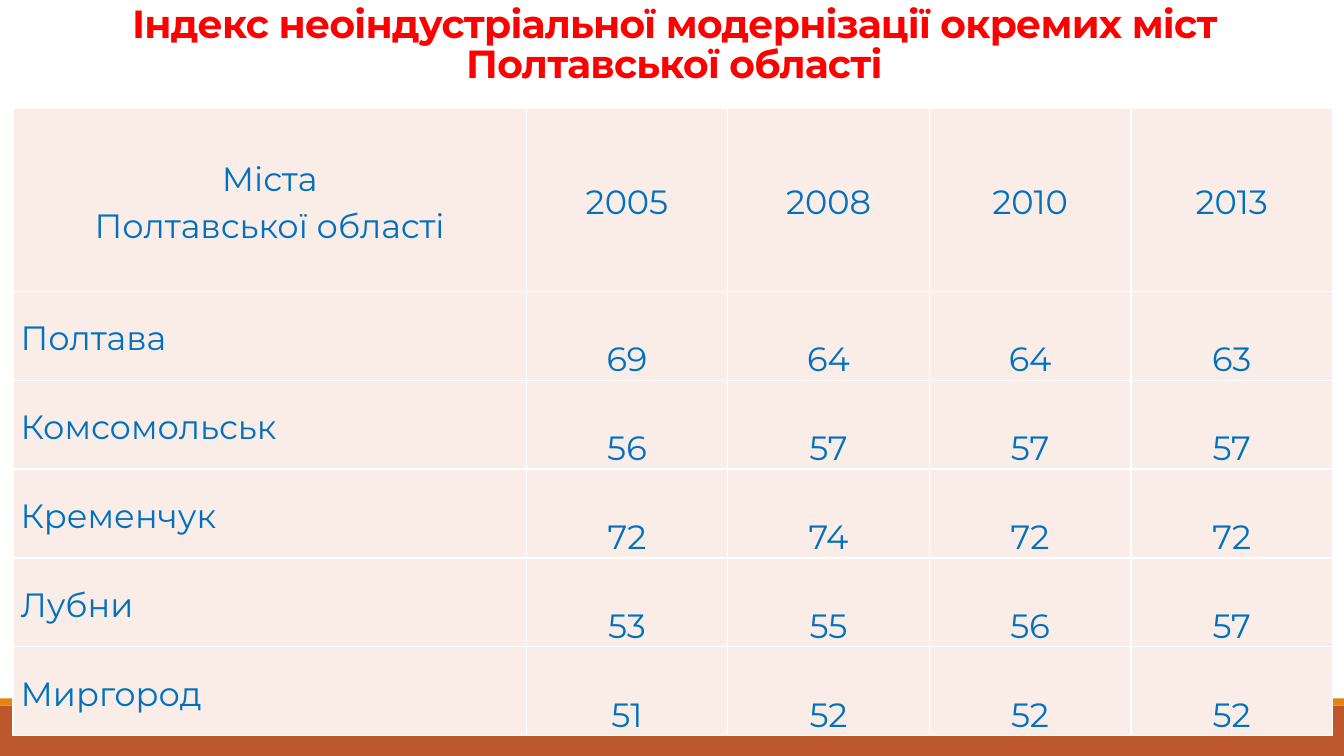
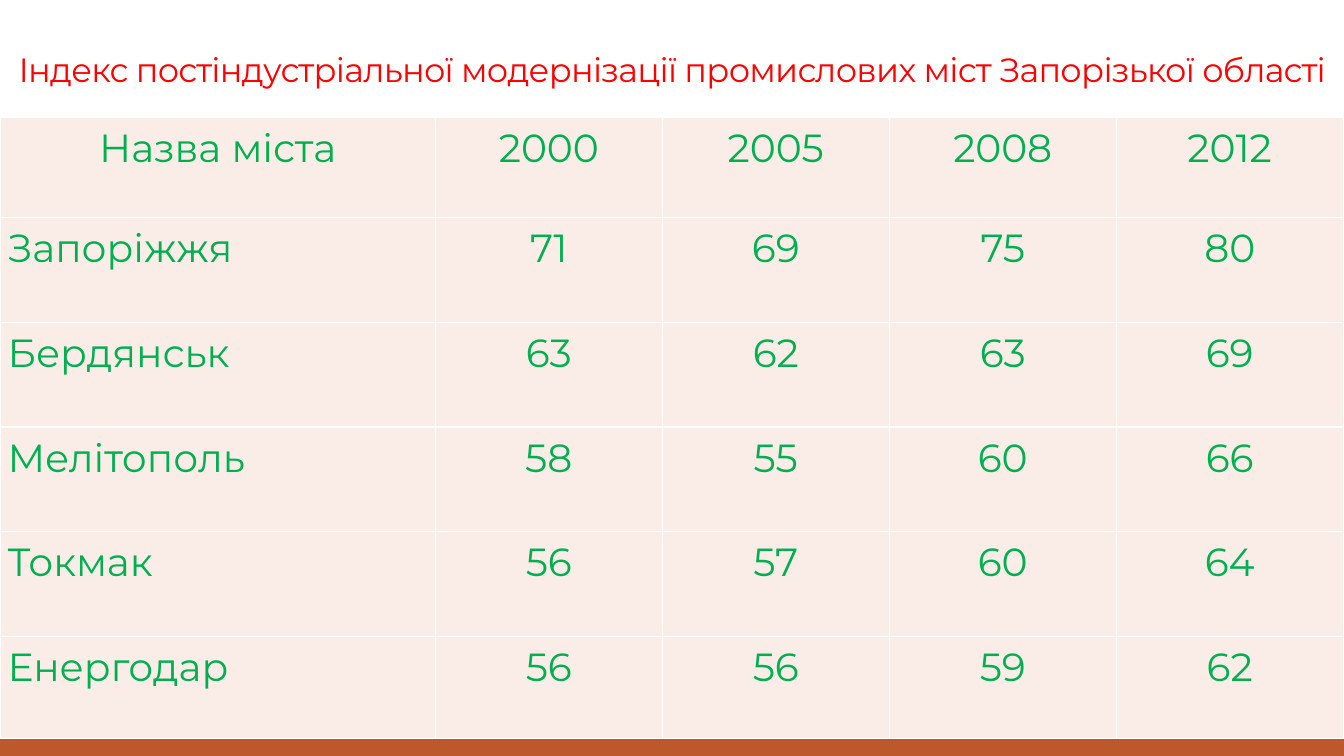
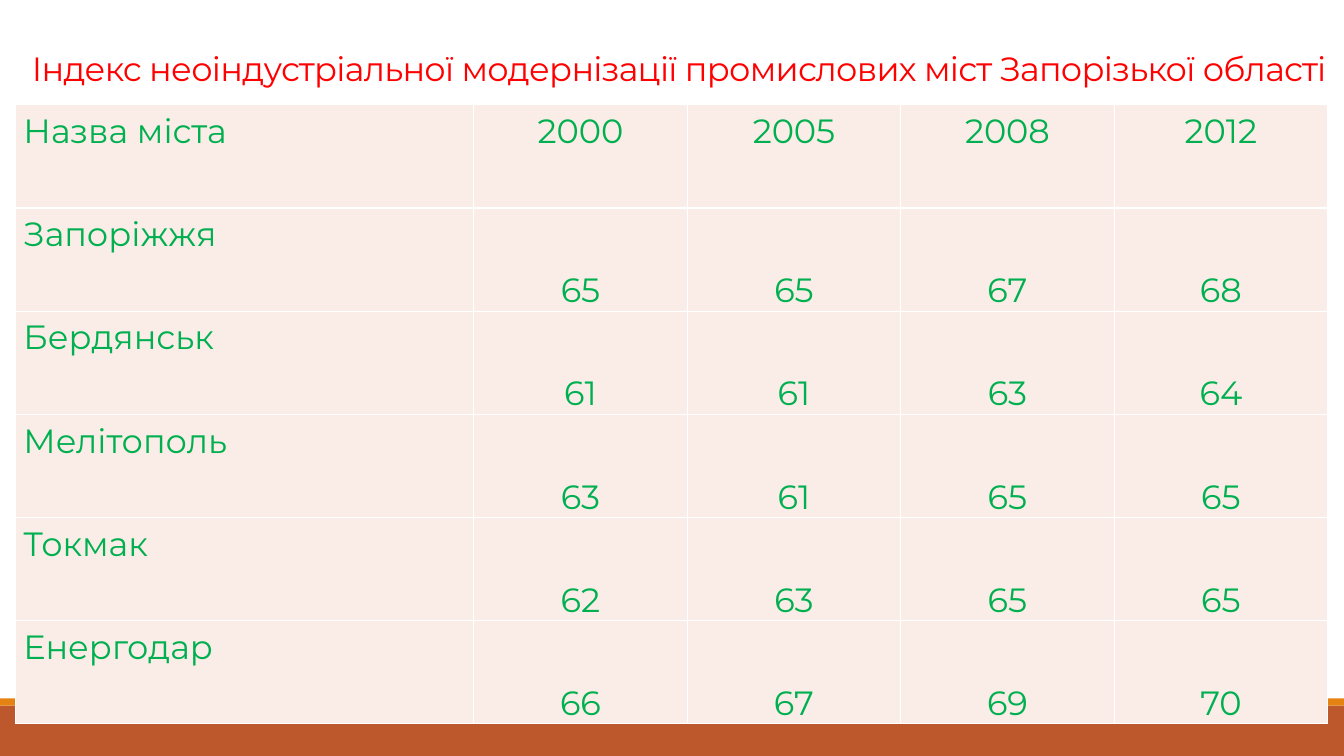
"""Build three slides of modernisation index tables for Ukrainian cities."""
import pptx
import pptx.dml.color
import pptx.enum.shapes
import pptx.enum.text
import pptx.oxml
import pptx.oxml.ns
import pptx.util
from lxml import etree

Cm, Pt = pptx.util.Cm, pptx.util.Pt
qn = pptx.oxml.ns.qn
ALIGN = pptx.enum.text.PP_ALIGN
ANCHOR = pptx.enum.text.MSO_ANCHOR
TOP, MIDDLE, BOTTOM = ANCHOR.TOP, ANCHOR.MIDDLE, ANCHOR.BOTTOM

FONT = "Montserrat"
COLORS = {
    "rust": "BD582C",
    "orange": "E48312",
    "red": "FF0000",
    "blue": "0070C0",
    "green": "00B050",
    "cell": "FAEDE7",
    "border": "FFFFFF",
}
SLIDE_W, SLIDE_H = 33.87, 19.05
BANDS = [("rust", 17.78, 1.27), ("orange", 17.6, 0.18)]

SLIDES = [
    {
        "title": "Індекс неоіндустріальної модернізації окремих міст Полтавської області",
        "title_box": (0.41, 0, 33.17, 2.31), "title_size": 28, "bold": True,
        "origin": (0.33, 2.72), "cols": [12.93] + [5.08] * 4, "rows": [4.62] + [2.24] * 5,
        "size": 24, "color": "blue", "corner_align": ALIGN.CENTER,
        "anchors": {"head": MIDDLE, "city": MIDDLE, "value": BOTTOM},
        "data": [
            ("Міста\nПолтавської області", 2005, 2008, 2010, 2013),
            ("Полтава", 69, 64, 64, 63),
            ("Комсомольськ", 56, 57, 57, 57),
            ("Кременчук", 72, 74, 72, 72),
            ("Лубни", 53, 55, 56, 57),
            ("Миргород", 51, 52, 52, 52),
        ],
    },
    {
        "title": "Індекс постіндустріальної модернізації промислових міст Запорізької області",
        "title_box": (0, 0, SLIDE_W, 2.39), "title_size": 24, "bold": False,
        "origin": (0, 2.95), "cols": [10.97] + [5.72] * 4, "rows": [2.53] + [2.64] * 4 + [2.56],
        "size": 28, "color": "green", "corner_align": ALIGN.CENTER,
        "anchors": {"head": TOP, "city": TOP, "value": TOP},
        "data": [
            ("Назва міста", 2000, 2005, 2008, 2012),
            ("Запоріжжя", 71, 69, 75, 80),
            ("Бердянськ", 63, 62, 63, 69),
            ("Мелітополь", 58, 55, 60, 66),
            ("Токмак", 56, 57, 60, 64),
            ("Енергодар", 56, 56, 59, 62),
        ],
    },
    {
        "title": "Індекс неоіндустріальної модернізації промислових міст Запорізької області",
        "title_box": (0.36, 0, 33.5, 2.36), "title_size": 24, "bold": False,
        "origin": (0.4, 2.64), "cols": [11.54] + [5.38] * 4, "rows": [2.6] * 6,
        "size": 24, "color": "green", "corner_align": ALIGN.LEFT,
        "anchors": {"head": TOP, "city": TOP, "value": BOTTOM},
        "data": [
            ("Назва міста", 2000, 2005, 2008, 2012),
            ("Запоріжжя", 65, 65, 67, 68),
            ("Бердянськ", 61, 61, 63, 64),
            ("Мелітополь", 63, 61, 65, 65),
            ("Токмак", 62, 63, 65, 65),
            ("Енергодар", 66, 67, 69, 70),
        ],
    },
]


def rgb(name):
    return pptx.dml.color.RGBColor.from_string(COLORS[name])


def format_paragraph(p, size, color, align, spacing, bold=False):
    p.alignment = align
    p.line_spacing = spacing
    p.font.name = FONT
    p.font.size = Pt(size)
    p.font.bold = bold
    p.font.color.rgb = rgb(color)


def add_bands(slide, master):
    """Draw the bottom bands and move them to the back of the master."""
    for i, (color, top, height) in enumerate(BANDS):
        sp = slide.shapes.add_shape(pptx.enum.shapes.MSO_SHAPE.RECTANGLE,
                                    0, Cm(top), Cm(SLIDE_W), Cm(height))
        sp.shadow.inherit = False
        sp.fill.solid()
        sp.fill.fore_color.rgb = rgb(color)
        sp.line.fill.background()
        master.shapes.element.insert(2 + i, sp.element)


def set_title(slide, item):
    sp = slide.shapes.title
    sp.left, sp.top, sp.width, sp.height = map(Cm, item["title_box"])
    tf = sp.text_frame
    tf.text = item["title"]
    tf.word_wrap = True
    tf.auto_size = pptx.enum.text.MSO_AUTO_SIZE.NONE
    tf.vertical_anchor = BOTTOM
    format_paragraph(tf.paragraphs[0], item["title_size"], "red", ALIGN.CENTER, 0.85, item["bold"])
    sp.element.find(".//" + qn("a:defRPr")).set("spc", "-50")


def add_borders(frame):
    for tc_pr in frame.element.iter(qn("a:tcPr")):
        for i, side in enumerate(("lnL", "lnR", "lnT", "lnB")):
            ln = etree.Element(qn("a:" + side), w=str(Pt(1)))
            fill = etree.SubElement(ln, qn("a:solidFill"))
            etree.SubElement(fill, qn("a:srgbClr"), val=COLORS["border"])
            tc_pr.insert(i, ln)


def add_index_table(slide, item):
    cols, rows = item["cols"], item["rows"]
    box = (*item["origin"], sum(cols), sum(rows))
    frame = slide.shapes.add_table(len(rows), len(cols), *map(Cm, box))
    table = frame.table
    table.first_row = table.horz_banding = False
    for col, width in zip(table.columns, cols):
        col.width = Cm(width)
    for row, height in zip(table.rows, rows):
        row.height = Cm(height)
    for r, values in enumerate(item["data"]):
        for c, value in enumerate(values):
            cell = table.cell(r, c)
            cell.text = str(value)
            cell.margin_left = cell.margin_right = Cm(0.19)
            cell.margin_top = cell.margin_bottom = 0
            part = "head" if r == 0 else "city" if c == 0 else "value"
            cell.vertical_anchor = item["anchors"][part]
            cell.fill.solid()
            cell.fill.fore_color.rgb = rgb("cell")
            align = ALIGN.CENTER
            if c == 0:
                align = item["corner_align"] if r == 0 else ALIGN.LEFT
            for p in cell.text_frame.paragraphs:
                format_paragraph(p, item["size"], item["color"], align, 1.15)
    add_borders(frame)


def main():
    prs = pptx.Presentation()
    prs.slide_width, prs.slide_height = Cm(SLIDE_W), Cm(SLIDE_H)
    layout = prs.slide_layouts.get_by_name("Title Only")
    for i, item in enumerate(SLIDES):
        slide = prs.slides.add_slide(layout)
        if i == 0:
            add_bands(slide, prs.slide_master)
        set_title(slide, item)
        add_index_table(slide, item)
    prs.save("out.pptx")


if __name__ == "__main__":
    main()
